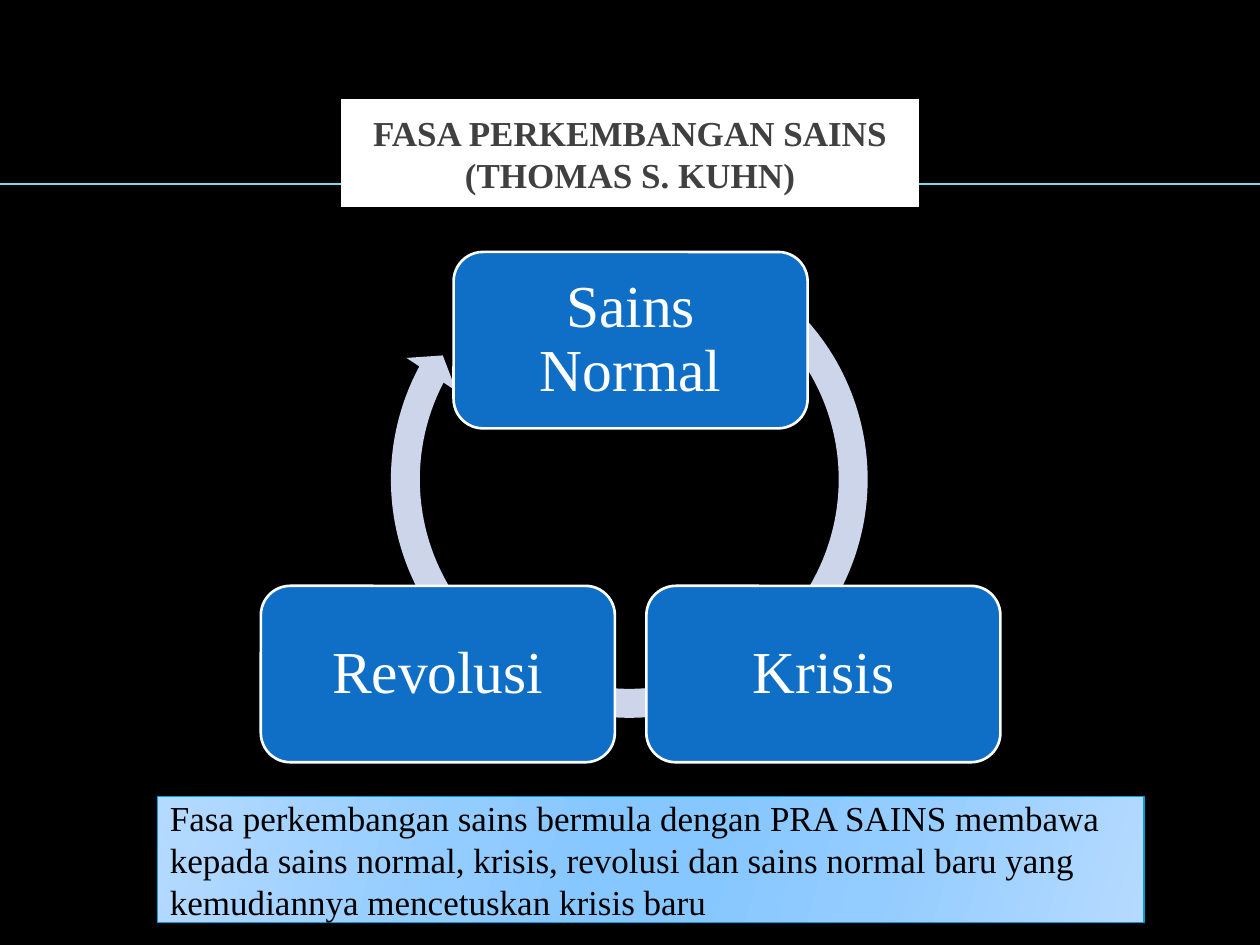
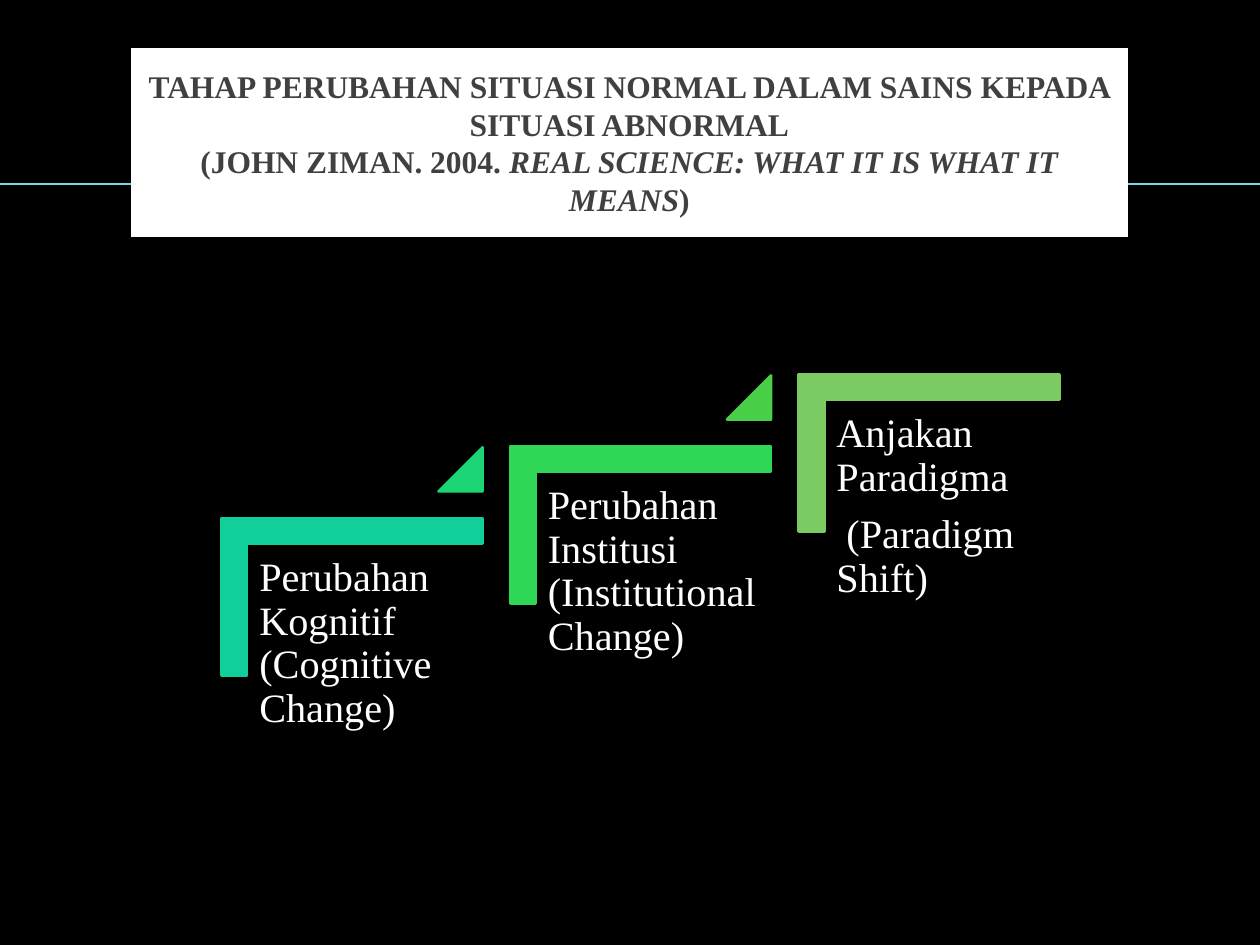
from lxml.etree import SubElement
from pptx import Presentation
from pptx.dml.color import RGBColor
from pptx.enum.shapes import MSO_CONNECTOR as Connector, MSO_SHAPE as Shape
from pptx.enum.text import MSO_ANCHOR as Anchor, PP_ALIGN as Align
from pptx.oxml.ns import qn
from pptx.util import Inches, Pt

# Content: title lines are lists of (text, italic) spans
KUHN_TITLE = [[("FASA PERKEMBANGAN SAINS (THOMAS S. KUHN)", False)]]
PHASES = [("Sains Normal", 0, 2.0), ("Krisis", 1, 4.65), ("Revolusi", -1, 4.65)]
SUMMARY = ("Fasa perkembangan sains bermula dengan PRA SAINS membawa kepada sains "
           "normal, krisis, revolusi dan sains normal baru yang kemudiannya "
           "mencetuskan krisis baru")
ZIMAN_TITLE = [
    [("TAHAP PERUBAHAN SITUASI NORMAL DALAM SAINS KEPADA SITUASI ABNORMAL", False)],
    [("(JOHN ZIMAN. 2004. ", False),
     ("REAL SCIENCE: WHAT IT IS WHAT IT MEANS", True), (")", False)],
]
# Each stage: paragraphs, corner colour, colour of the triangle leading onward
STAGES = [
    (["Perubahan Kognitif (Cognitive Change)"], "teal", "teal_green"),
    (["Perubahan Institusi (Institutional Change)"], "green", "leaf"),
    (["Anjakan Paradigma", " (Paradigm Shift)"], "olive", None),
]

# Shared style
FONT = "Times New Roman"
COLORS = {
    "black": "000000", "white": "FFFFFF", "title": "404040", "rule": "77D9E8",
    "ring": "CCD5EA", "phase": "0F6FC6", "edge": "009DD9",
    "teal": "10CF9B", "teal_green": "1CD676", "green": "2FD757",
    "leaf": "4ACF49", "olive": "7CCA62",
}
SUMMARY_STOPS = [(0, "B5DAFF"), (30, "93CCFF"), (45, "87C7FF"),
                 (55, "87C7FF"), (73, "93CCFF"), (100, "B5DAFF")]


def color(name):
    return RGBColor.from_string(COLORS[name])


def add_box(page, kind, left, top, width, height, fill=None, line=None, weight=1.5,
            adjust=(), turn=0):
    box = page.shapes.add_shape(kind, *map(Inches, (left, top, width, height)))
    box.shadow.inherit = False
    box.rotation = turn
    for index, value in enumerate(adjust):
        box.adjustments[index] = value
    if fill:
        box.fill.solid()
        box.fill.fore_color.rgb = color(fill)
    if line:
        box.line.color.rgb = color(line)
        box.line.width = Pt(weight)
    else:
        box.line.fill.background()
    return box


def write(box, lines, size, ink="white", bold=False, align=Align.LEFT, anchor=Anchor.MIDDLE,
          inset=0.1, inset_y=0.05, spacing=None, before=0, after=0, breaks=False):
    """Lines are strings or lists of (text, italic); breaks keeps them in one paragraph."""
    frame = box.text_frame
    frame.word_wrap = True
    frame.vertical_anchor = anchor
    frame.margin_left = frame.margin_right = Inches(inset)
    frame.margin_top = frame.margin_bottom = Inches(inset_y)
    para = frame.paragraphs[0]
    for index, line in enumerate(lines):
        if index and breaks:
            para.add_line_break()
        elif index:
            para = frame.add_paragraph()
        para.alignment = align
        para.line_spacing = spacing
        para.space_before, para.space_after = Pt(before), Pt(after)
        for text, italic in [(line, False)] if isinstance(line, str) else line:
            span = para.add_run()
            span.text = text
            font = span.font
            font.name, font.size = FONT, Pt(size)
            font.bold, font.italic = bold, italic
            font.color.rgb = color(ink)


def add_page(deck, title, place, size):
    """Black page with the rule across it and the white title box."""
    page = deck.slides.add_slide(deck.slide_layouts[6])
    page.background.fill.solid()
    page.background.fill.fore_color.rgb = color("black")
    rule = page.shapes.add_connector(Connector.STRAIGHT, 0, Inches(1.46),
                                     deck.slide_width, Inches(1.46))
    rule.line.color.rgb = color("rule")
    rule.line.width = Pt(1)
    SubElement(rule._element.spPr, qn("a:effectLst"))
    box = add_box(page, Shape.RECTANGLE, *place, fill="white", line="white", weight=6)
    SubElement(box._element.spPr.find(qn("a:ln")), qn("a:miter"), lim="800000")
    write(box, title, size, ink="title", bold=True, align=Align.CENTER,
          inset=0.08, before=4, breaks=True)
    return page


def shade_summary(box):
    """Six-stop gradient and a soft shadow below."""
    box.fill.gradient()
    box.fill.gradient_angle = 344
    properties = box._element.spPr
    stops = properties.find(".//" + qn("a:gsLst"))
    for stop in list(stops):
        stops.remove(stop)
    for position, value in SUMMARY_STOPS:
        stop = SubElement(stops, qn("a:gs"), pos=str(position * 1000))
        SubElement(stop, qn("a:srgbClr"), val=value)
    shadow = SubElement(properties.find(qn("a:effectLst")), qn("a:outerShdw"),
                        blurRad=str(Pt(3)), dist=str(Pt(2)), dir=str(90 * 60000),
                        rotWithShape="0")
    tint = SubElement(shadow, qn("a:srgbClr"), val=COLORS["black"])
    SubElement(tint, qn("a:alpha"), val="40000")


def build_cycle(deck):
    page = add_page(deck, KUHN_TITLE, (2.75, 0.83, 4.5, 0.77), 20)
    # Ring behind the three phases
    add_box(page, Shape.CIRCULAR_ARROW, 2.98, 1.79, 4.03, 4.03, fill="ring",
            adjust=(0.057, 3.405, 124.757, 182.314, 0.059))
    for name, side, top in PHASES:
        box = add_box(page, Shape.ROUNDED_RECTANGLE, 3.6 + 1.53 * side, top, 2.81, 1.4,
                      fill="phase", line="white")
        write(box, [name], 34, align=Align.CENTER, inset=0.2, inset_y=0.14, spacing=0.9)
    # Summary band
    band = add_box(page, Shape.RECTANGLE, 1.25, 6.32, 7.83, 1, line="edge", weight=0.75)
    shade_summary(band)
    write(band, [SUMMARY], 20, ink="black")


def build_steps(deck):
    page = add_page(deck, ZIMAN_TITLE, (1.08, 0.42, 7.83, 1.42), 18)
    # Stages climb to the right in equal steps
    for step, (lines, corner, onward) in enumerate(STAGES):
        left, top = 2.17 + 2.29 * step, 3.7 - 0.57 * step
        add_box(page, Shape.CORNER, left, top, 1.25, 2.07, fill=corner, line=corner,
                adjust=(0.161, 0.161), turn=90)
        label = page.shapes.add_textbox(Inches(left - 0.21), Inches(top + 0.62),
                                        Inches(1.87), Inches(1.64))
        write(label, lines, 23, anchor=Anchor.TOP, inset_y=0.1, spacing=0.9, after=8)
        if onward:
            add_box(page, Shape.ISOSCELES_TRIANGLE, left + 1.31, top - 0.15, 0.35, 0.35,
                    fill=onward, line=onward, adjust=(1,))


def main():
    deck = Presentation()
    deck.slide_width, deck.slide_height = Inches(10), Inches(7.5)
    build_cycle(deck)
    build_steps(deck)
    deck.save("out.pptx")


if __name__ == "__main__":
    main()
